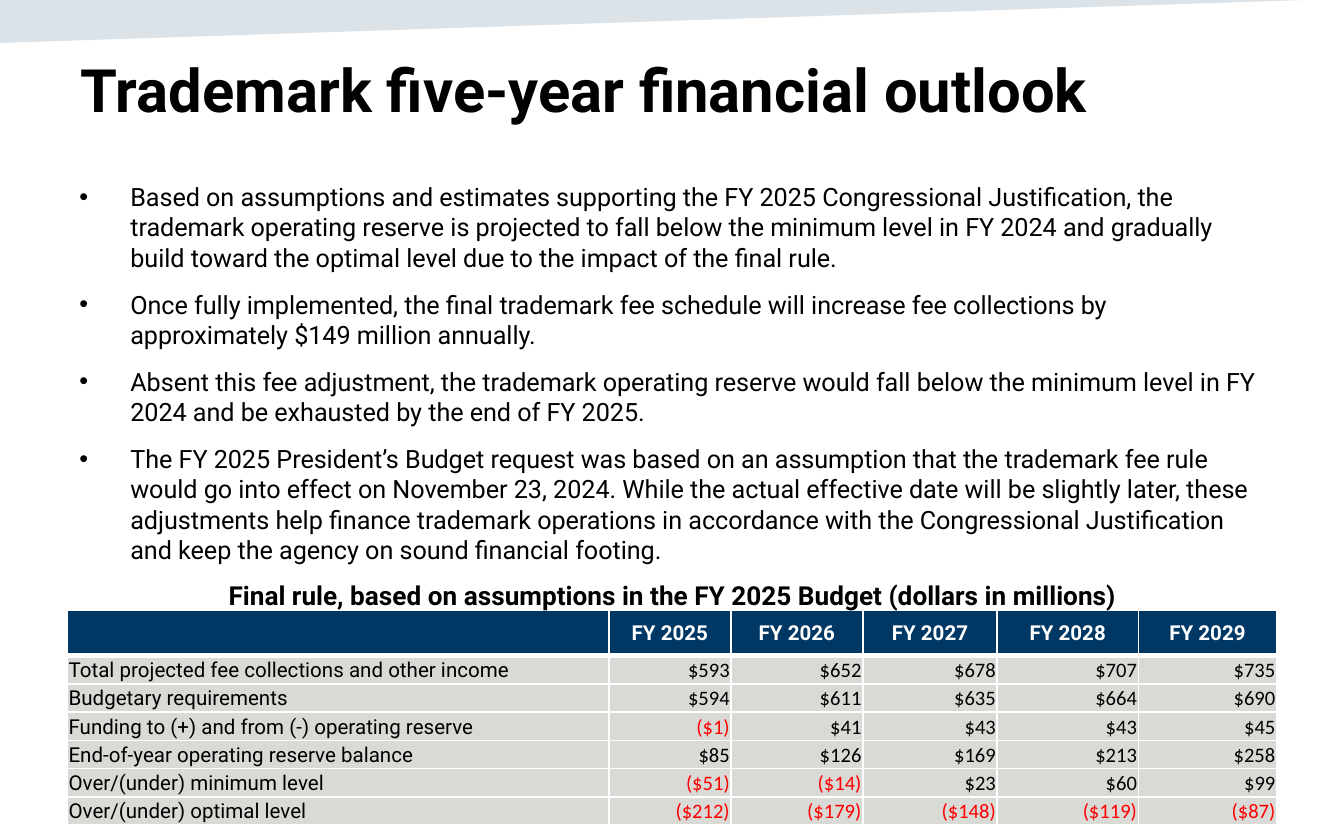
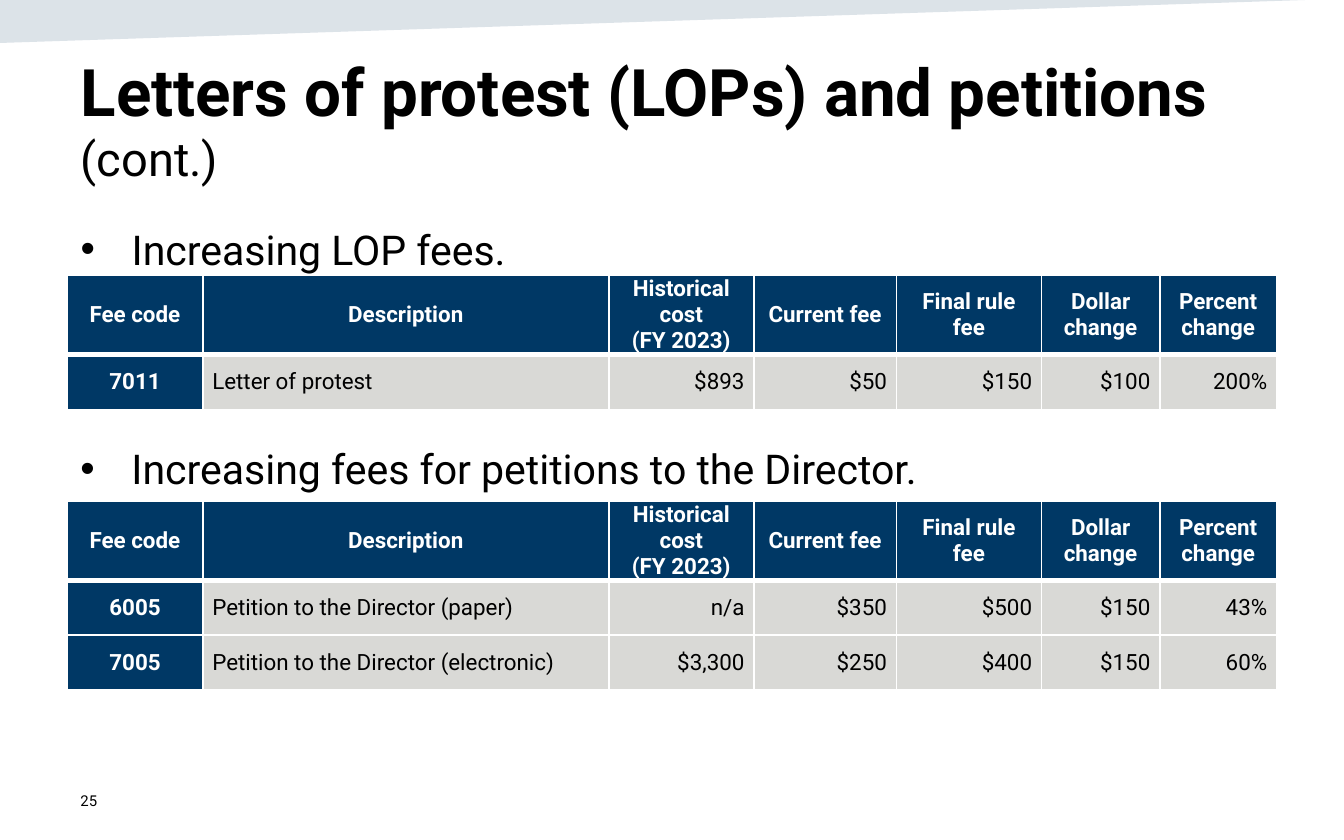
from lxml.etree import SubElement
from pptx import Presentation
from pptx.dml.color import RGBColor
from pptx.enum.text import MSO_ANCHOR as Anchor, MSO_AUTO_SIZE as Auto, PP_ALIGN as Align
from pptx.oxml import parse_xml
from pptx.oxml.ns import nsdecls, qn
from pptx.util import Inches, Pt

BLACK = RGBColor(0x00, 0x00, 0x00)
WHITE = RGBColor(0xFF, 0xFF, 0xFF)
RED = RGBColor(0xFF, 0x00, 0x00)
NAVY = RGBColor(0x00, 0x38, 0x65)
GRAY = RGBColor(0xD9, 0xD9, 0xD6)
STEEL = RGBColor(0x16, 0x44, 0x69)
FONT = "Roboto"
LEFT, WIDE = 0.5, 9

# Content
POINTS = [
    "Based on assumptions and estimates supporting the FY 2025 Congressional "
    "Justification, the trademark operating reserve is projected to fall below the "
    "minimum level in FY 2024 and gradually build toward the optimal level due to "
    "the impact of the final rule.",
    "Once fully implemented, the final trademark fee schedule will increase fee "
    "collections by approximately $149 million annually.",
    "Absent this fee adjustment, the trademark operating reserve would fall below "
    "the minimum level in FY 2024 and be exhausted by the end of FY 2025.",
    "The FY 2025 President’s Budget request was based on an assumption that the "
    "trademark fee rule would go into effect on November 23, 2024. While the actual "
    "effective date will be slightly later, these adjustments help finance trademark "
    "operations in accordance with the Congressional Justification and keep the "
    "agency on sound financial footing.",
]
CAPTION = "Final rule, based on assumptions in the FY 2025 Budget (dollars in millions)"
OUTLOOK = [
    ("", "FY 2025", "FY 2026", "FY 2027", "FY 2028", "FY 2029"),
    ("Total projected fee collections and other income",
     "$593", "$652", "$678", "$707", "$735"),
    ("Budgetary requirements", "$594", "$611", "$635", "$664", "$690"),
    ("Funding to (+) and from (-) operating reserve",
     "($1)", "$41", "$43", "$43", "$45"),
    ("End-of-year operating reserve balance", "$85", "$126", "$169", "$213", "$258"),
    ("Over/(under) minimum level", "($51)", "($14)", "$23", "$60", "$99"),
    ("Over/(under) optimal level", "($212)", "($179)", "($148)", "($119)", "($87)"),
]
FEE_HEAD = ("Fee code", "Description", "Historical cost\n(FY 2023)", "Current fee",
            "Final rule fee", "Dollar change", "Percent change")
# Bullet, bullet top and height, table top, fee rows
FEES = [
    ("Increasing LOP fees.", 1.58, 4.14, 2.05,
     [("7011", "Letter of protest", "$893", "$50", "$150", "$100", "200%")]),
    ("Increasing fees for petitions to the Director.", 3.25, 0.5, 3.73,
     [("6005", "Petition to the Director (paper)",
       "n/a", "$350", "$500", "$150", "43%"),
      ("7005", "Petition to the Director (electronic)",
       "$3,300", "$250", "$400", "$150", "60%")]),
]

# Table layouts: label is the column of left-aligned text
OUT_STYLE = dict(cols=(4.03, 0.91, 0.98, 1, 1.05, 1.03), head=0.34, row=0.21,
                 size=11, label=0, digits="Calibri", gap=0,
                 inset=(0.01, 0.01, 0.01, 0))
FEE_STYLE = dict(cols=(1.01, 3.02, 1.08, 1.06, 1.08, 0.88, 0.87), head=0.58, row=0.41,
                 size=12, label=1, digits=FONT, gap=6,
                 inset=(0.07, 0, 0.07, 0))


def style(item, size, color=BLACK, bold=False, name=FONT):
    font = item.font
    font.name, font.size, font.bold = name, Pt(size), bold
    font.color.rgb = color


def place(shape, left, top, width, height):
    shape.left, shape.top = Inches(left), Inches(top)
    shape.width, shape.height = Inches(width), Inches(height)


def set_frame(shape, anchor=Anchor.TOP):
    frame = shape.text_frame
    frame.word_wrap, frame.auto_size = True, Auto.NONE
    frame.vertical_anchor = anchor
    return frame


def add_text(slide, text, box, size, anchor=Anchor.TOP, align=Align.LEFT, bold=False):
    frame = set_frame(slide.shapes.add_textbox(*map(Inches, box)), anchor)
    frame.text = text
    para = frame.paragraphs[0]
    para.alignment = align
    style(para, size, bold=bold)


def fill_list(shape, box, points, size, spacing=None):
    place(shape, *box)
    frame = set_frame(shape)
    frame.text = "\n".join(points)
    for para in frame.paragraphs:
        para.space_before = Pt(9)
        para.line_spacing = spacing
        props = para._p.get_or_add_pPr()
        props.set("marL", str(Inches(0.38)))
        props.set("indent", str(-Inches(0.38)))
        SubElement(props, qn("a:buFont"), typeface="Arial")
        SubElement(props, qn("a:buChar"), char="•")
        style(para, size)


def add_slide(deck, parts, top):
    """Slide with the slanted top band and a title made of (text, size, bold) runs."""
    slide = deck.slides.add_slide(deck.slide_layouts[1])
    pen = slide.shapes.build_freeform(0, Inches(-0.01), scale=1)
    pen.add_line_segments([(0, Inches(0.32)), (Inches(10.02), Inches(-0.01))])
    band = pen.convert_to_shape()
    band.shadow.inherit = False
    band.line.fill.background()
    band.fill.solid()
    band.fill.fore_color.rgb = STEEL
    tint = band._element.spPr.find(".//" + qn("a:srgbClr"))
    SubElement(tint, qn("a:alpha"), val="15000")

    title = slide.shapes.title
    place(title, LEFT, top, WIDE, 1.04)
    para = set_frame(title).paragraphs[0]
    para.alignment = Align.LEFT
    for text, size, bold in parts:
        run = para.add_run()
        run.text = text
        style(run, size, bold=bold)
    return slide


def add_borders(cell, top, bottom):
    props = cell._tc.get_or_add_tcPr()
    edges = (("lnL", 1), ("lnR", 1), ("lnT", top), ("lnB", bottom))
    for spot, (tag, width) in enumerate(edges):
        props.insert(spot, parse_xml(
            f'<a:{tag} {nsdecls("a")} w="{Pt(width)}"><a:solidFill>'
            f'<a:srgbClr val="{WHITE}"/></a:solidFill></a:{tag}>'))


def fill_cell(cell, text, row, col, look):
    head, label = row == 0, look["label"]
    dark = head or col < label
    cell.fill.solid()
    cell.fill.fore_color.rgb = NAVY if dark else GRAY
    add_borders(cell, 3 if row == 1 else 1, 3 if head else 1)
    cell.vertical_anchor = Anchor.MIDDLE
    (cell.margin_left, cell.margin_top,
     cell.margin_right, cell.margin_bottom) = map(Inches, look["inset"])
    cell.text = text
    color = WHITE if dark else RED if text.startswith("(") else BLACK
    name = look["digits"] if not head and col > label else FONT
    for para in cell.text_frame.paragraphs:
        para.alignment = (Align.CENTER if dark else
                          Align.LEFT if col == label else Align.RIGHT)
        if not head:
            para.space_before = para.space_after = Pt(look["gap"])
        style(para, look["size"], color, dark, name)


def add_grid(slide, rows, top, look):
    cols = look["cols"]
    tall = look["head"] + look["row"] * (len(rows) - 1)
    box = map(Inches, (LEFT, top, WIDE, tall))
    table = slide.shapes.add_table(len(rows), len(cols), *box).table
    for col, width in zip(table.columns, cols):
        col.width = Inches(width)
    for r, texts in enumerate(rows):
        table.rows[r].height = Inches(look["row"] if r else look["head"])
        for c, text in enumerate(texts):
            fill_cell(table.cell(r, c), text, r, c, look)


def build_outlook(deck):
    slide = add_slide(deck, [("Trademark five-year financial outlook", 32, True)], 0.34)
    fill_list(slide.placeholders[1], (0.49, 1.3, WIDE, 3.66), POINTS, 13.5)
    add_grid(slide, OUTLOOK, 4.54, OUT_STYLE)
    add_text(slide, CAPTION, (0.51, 4.26, 8.99, 0.34), 14,
             align=Align.CENTER, bold=True)


def build_fees(deck):
    slide = add_slide(deck, [("Letters of protest (LOPs) and petitions ", 35.1, True),
                             ("(cont.)", 25.2, False)], 0.33)
    for i, (point, top, tall, grid_top, rows) in enumerate(FEES):
        box = (LEFT, top, WIDE, tall)
        shape = (slide.shapes.add_textbox(*map(Inches, box)) if i
                 else slide.placeholders[1])
        fill_list(shape, box, [point], 22, None if i else 1.1)
        add_grid(slide, [FEE_HEAD] + rows, grid_top, FEE_STYLE)
    add_text(slide, "25", (LEFT, 5.79, 2.25, 0.33), 8, Anchor.MIDDLE)


def main():
    deck = Presentation()
    deck.slide_width, deck.slide_height = Inches(10), Inches(6.25)
    build_outlook(deck)
    build_fees(deck)
    deck.save("out.pptx")


if __name__ == "__main__":
    main()
